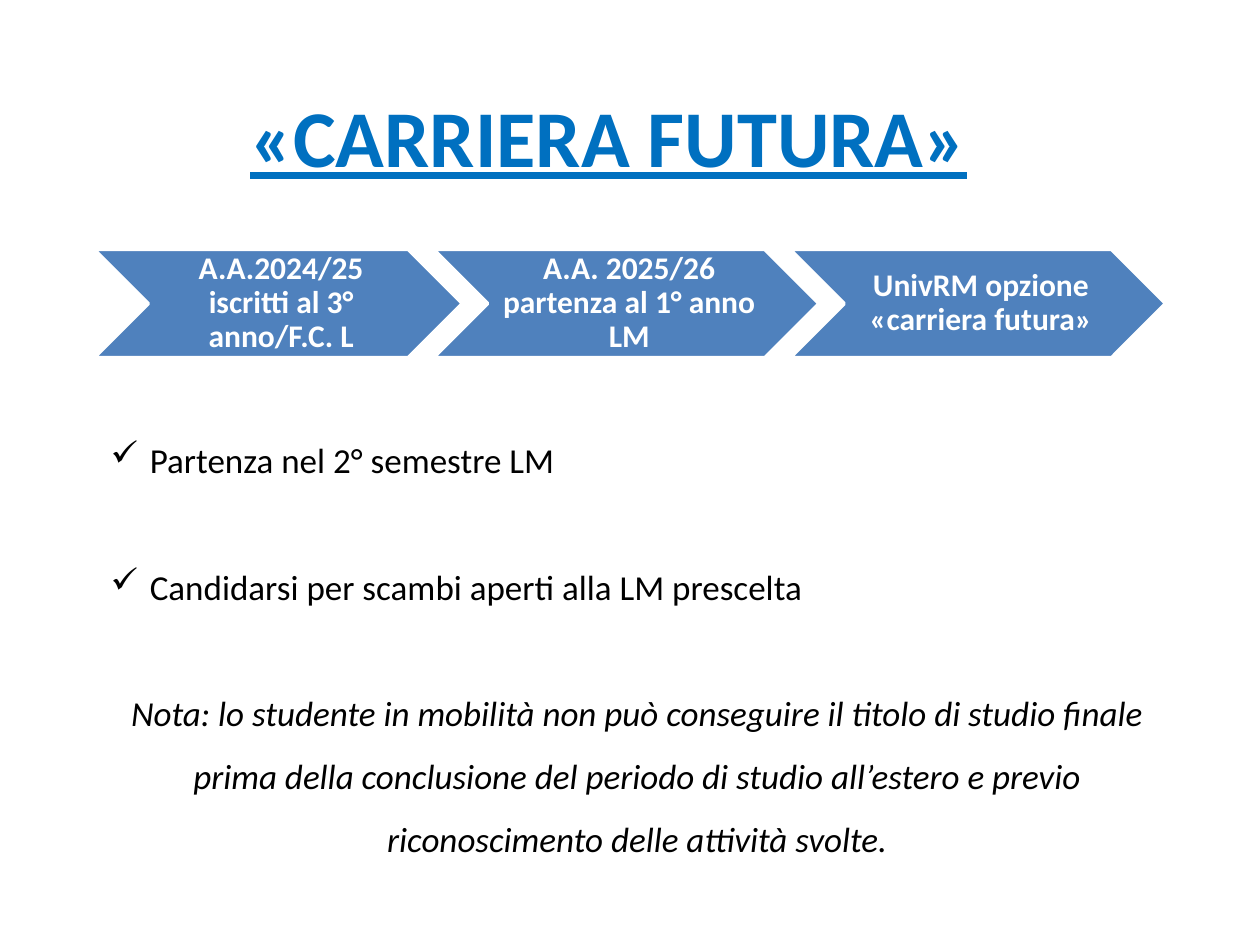
from lxml.etree import SubElement
from pptx import Presentation
from pptx.dml.color import RGBColor
from pptx.enum.shapes import MSO_SHAPE as Preset
from pptx.enum.text import MSO_ANCHOR as Anchor, PP_ALIGN as Align
from pptx.oxml.ns import qn
from pptx.util import Cm, Pt


def color(hex_code):
    """Turn a hex string into a colour."""
    return RGBColor.from_string(hex_code)


def prepare_frame(shape, anchor, insets=(0.25, 0.13, 0.25, 0.13)):
    """Set wrapping, anchor and insets in cm, and return the text frame."""
    frame = shape.text_frame
    frame.word_wrap = True
    frame.vertical_anchor = anchor
    (frame.margin_left, frame.margin_top,
     frame.margin_right, frame.margin_bottom) = map(Cm, insets)
    return frame


def write(paragraph, text, size=20, fill="000000", bold=False, italic=False,
          underline=False, align=Align.CENTER, spacing=1.0, before=0):
    """Write formatted text into a paragraph."""
    paragraph.alignment = align
    paragraph.line_spacing = spacing
    paragraph.space_before = Pt(before)
    run = paragraph.add_run()
    run.text = text
    font = run.font
    font.name, font.size = "Calibri", Pt(size)
    font.bold, font.italic, font.underline = bold, italic, underline
    font.color.rgb = color(fill)


def add_check(paragraph, indent=0.79):
    """Give a paragraph a check mark bullet with a hanging indent."""
    properties = paragraph._p.get_or_add_pPr()
    properties.set("marL", str(Cm(indent)))
    properties.set("indent", str(-Cm(indent)))
    SubElement(properties, qn("a:buChar"), char="✓")


def add_title(slide, left, top, width, height):
    """Place the underlined heading."""
    heading = slide.shapes.add_textbox(Cm(left), Cm(top), Cm(width), Cm(height))
    frame = prepare_frame(heading, Anchor.MIDDLE)
    write(frame.paragraphs[0], "«CARRIERA FUTURA»", size=46, fill="0070C0",
          bold=True, underline=True)


def add_timeline(slide, left, top, height, steps, overlap=0.58):
    """Place a row of interlocking chevrons, one for each step."""
    for label, width in steps:
        step = slide.shapes.add_shape(Preset.CHEVRON, Cm(left), Cm(top),
                                      Cm(width), Cm(height))
        step.shadow.inherit = False
        step.fill.solid()
        step.fill.fore_color.rgb = color("4F81BD")
        step.line.color.rgb = color("FFFFFF")
        step.line.width = Pt(2)
        frame = prepare_frame(step, Anchor.MIDDLE, (0.2, 0.08, 0.08, 0.08))
        write(frame.paragraphs[0], label, size=18, fill="FFFFFF", bold=True,
              spacing=0.9)
        left += width - overlap


def add_details(slide, left, top, width, height, conditions, remark):
    """Place the checked conditions and the closing remark."""
    details = slide.shapes.add_textbox(Cm(left), Cm(top), Cm(width), Cm(height))
    frame = prepare_frame(details, Anchor.TOP)
    paragraph = frame.paragraphs[0]
    gap = 0
    for condition in conditions:
        write(paragraph, condition, align=Align.JUSTIFY, spacing=1.5, before=gap)
        add_check(paragraph)
        paragraph = frame.add_paragraph()
        gap = 36.5
    write(paragraph, remark, italic=True, spacing=1.5, before=gap)


def main():
    """Build the slide and save it."""
    deck = Presentation()
    deck.slide_width, deck.slide_height = Cm(25.4), Cm(19.05)
    slide = deck.slides.add_slide(deck.slide_layouts[6])
    add_title(slide, 1.12, 1.14, 22.3, 3.18)
    add_timeline(slide, 1.9, 5.03, 2.18, [
        ("A.A.2024/25 iscritti al 3° anno/F.C. L", 7.42),
        ("A.A. 2025/26 partenza al 1° anno LM", 7.77),
        ("UnivRM opzione «carriera futura»", 7.57),
    ])
    add_details(
        slide, 1.98, 8.28, 21.74, 10,
        ["Partenza nel 2° semestre LM",
         "Candidarsi per scambi aperti alla LM prescelta"],
        "Nota: lo studente in mobilità non può conseguire il titolo di studio "
        "finale prima della conclusione del periodo di studio all’estero e "
        "previo riconoscimento delle attività svolte.")
    deck.save("out.pptx")


if __name__ == "__main__":
    main()
